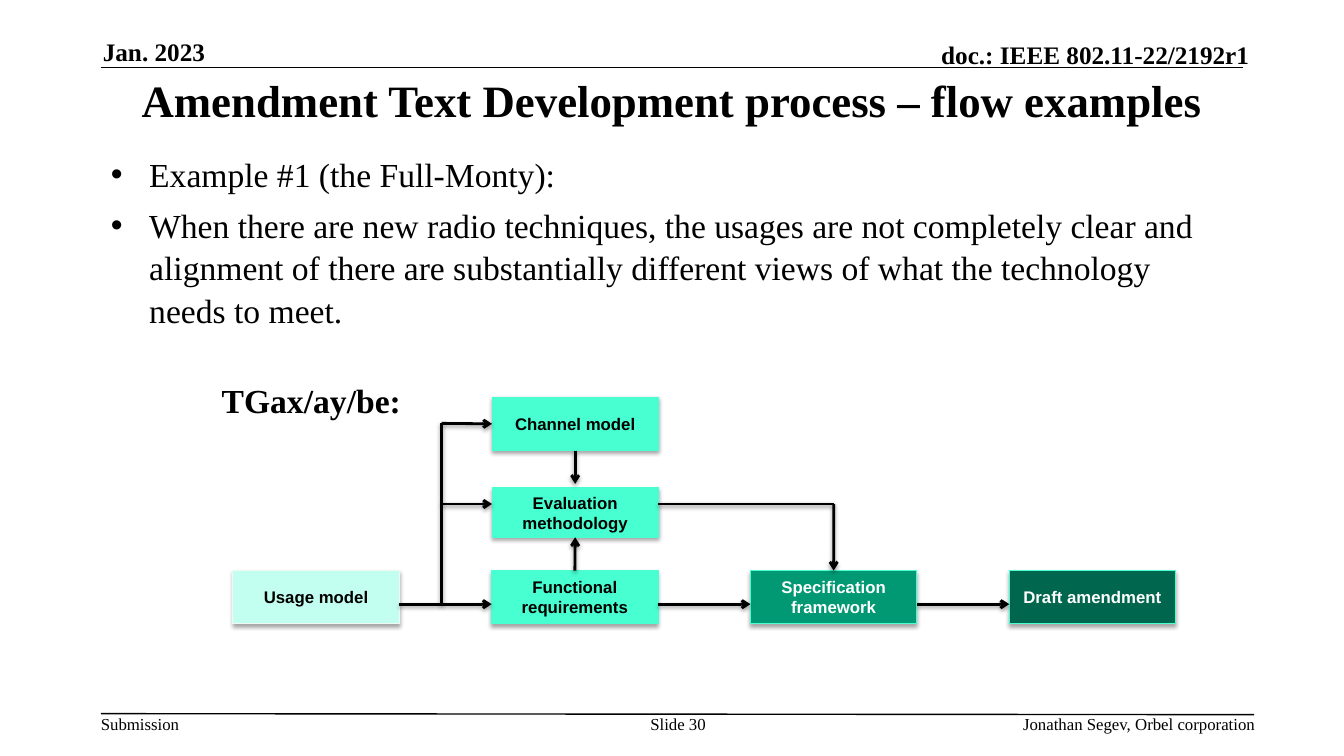
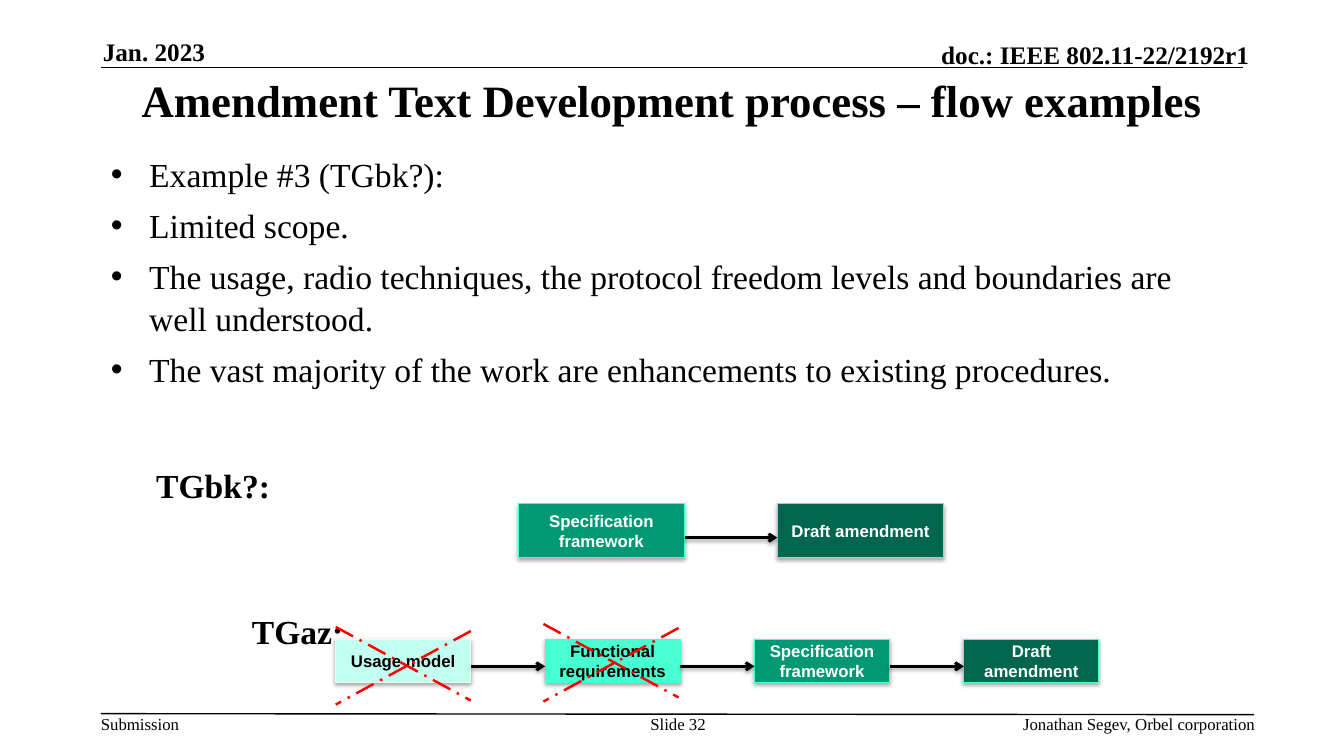
from lxml import etree
from pptx import Presentation
from pptx.dml.color import RGBColor
from pptx.enum.dml import MSO_LINE
from pptx.enum.shapes import MSO_CONNECTOR, MSO_SHAPE
from pptx.enum.text import MSO_ANCHOR, MSO_AUTO_SIZE, PP_ALIGN
from pptx.oxml.ns import qn
from pptx.util import Inches, Pt

LEFT, CENTER, RIGHT = PP_ALIGN.LEFT, PP_ALIGN.CENTER, PP_ALIGN.RIGHT
TOP, MIDDLE, BOTTOM = MSO_ANCHOR.TOP, MSO_ANCHOR.MIDDLE, MSO_ANCHOR.BOTTOM
FIXED = MSO_AUTO_SIZE.NONE
RECT, STRAIGHT = MSO_SHAPE.RECTANGLE, MSO_CONNECTOR.STRAIGHT
DASH_DOT = MSO_LINE.LONG_DASH_DOT

SERIF, SANS = "Times New Roman", "Arial"
COLORS = {
    "black": "000000", "white": "FFFFFF", "red": "FF0000",
    "pale": "C2FFF0", "mist": "EEF9F4", "mint": "47FFD1",
    "green": "009973", "deep": "00664D",
}
# Fill, outline and text colour of each step
STYLES = {
    "Usage model": ("pale", "mist", "black"),
    "Channel model": ("mint", "mint", "black"),
    "Evaluation methodology": ("mint", "mint", "black"),
    "Functional requirements": ("mint", "mint", "black"),
    "Specification framework": ("green", "mint", "white"),
    "Draft amendment": ("deep", "mint", "white"),
}
CHAIN = ["Usage model", "Functional requirements",
         "Specification framework", "Draft amendment"]
TITLE = "Amendment Text Development process – flow examples"


def color(name):
    return RGBColor.from_string(COLORS[name])


def place(shape, box):
    shape.left, shape.top, shape.width, shape.height = map(Inches, box)


def style(para, size, face=SERIF, bold=False, ink="black", align=LEFT):
    para.alignment = align
    font = para.font
    font.name, font.size, font.bold = face, Pt(size), bold
    font.color.rgb = color(ink)


def shade(shape, dist=None, alpha=0):
    """Give the shape a soft drop shadow, or none without a distance."""
    effects = etree.SubElement(shape._element.spPr, qn("a:effectLst"))
    if dist:
        drop = etree.SubElement(
            effects, qn("a:outerShdw"), blurRad=str(Pt(3.1)),
            dist=str(Pt(dist)), dir="5400000", rotWithShape="0")
        tint = etree.SubElement(drop, qn("a:srgbClr"), val=COLORS["black"])
        etree.SubElement(tint, qn("a:alpha"), val=str(alpha * 1000))


def write(slide, text, box, size, bold=True, align=LEFT, anchor=TOP, inset=0):
    label = slide.shapes.add_textbox(*map(Inches, box))
    frame = label.text_frame
    frame.word_wrap, frame.vertical_anchor = True, anchor
    frame.margin_left = frame.margin_right = Inches(inset)
    frame.margin_top = frame.margin_bottom = Inches(inset / 2)
    frame.text = text
    style(frame.paragraphs[0], size, bold=bold, align=align)


def rule(slide, start, end, width=1, ink="black", dash=None):
    line = slide.shapes.add_connector(
        STRAIGHT, *map(Inches, (*start, *end)))
    line.line.width = Pt(width)
    line.line.color.rgb = color(ink)
    if dash:
        line.line.dash_style = dash
    return line


def wire(slide, start, end, head=True):
    """Draw a shadowed flow line, with an arrowhead at its end."""
    line = rule(slide, start, end, 2)
    if head:
        etree.SubElement(line.line._get_or_add_ln(), qn("a:tailEnd"),
                         type="arrow")
    shade(line, 1.6, 38)
    return line


def plain(slide, *args):
    shade(rule(slide, *args))


def step(slide, name, box):
    fill, edge, ink = STYLES[name]
    shape = slide.shapes.add_shape(RECT, *map(Inches, box))
    shape.fill.solid()
    shape.fill.fore_color.rgb = color(fill)
    shape.line.color.rgb = color(edge)
    shape.line.width = Pt(0.75)
    shade(shape, 1.8, 35)
    frame = shape.text_frame
    frame.word_wrap, frame.vertical_anchor = True, MIDDLE
    frame.text = name
    style(frame.paragraphs[0], 12, SANS, True, ink, CENTER)
    return shape


def chain(slide, names, box, width):
    """Spread steps evenly over the box, joined by arrows."""
    left, top, span, height = box
    pitch = (span - width) / (len(names) - 1)
    level = top + 0.63 * height
    steps = {}
    for i, name in enumerate(names):
        x = left + i * pitch
        steps[name] = step(slide, name, (x, top, width, height))
        if i:
            wire(slide, (x - pitch + width, level), (x, level))
    return steps


def cross(slide, left, top):
    right = left + 1.34
    for start, end, y in ((left, right, top), (right, left, top + 0.04)):
        plain(slide, (start, y), (end, y + 0.73), 1.75, "red", DASH_DOT)


def page(deck, number, points):
    """Add a slide with header, footer, title and bullet list."""
    slide = deck.slides.add_slide(deck.slide_layouts[1])
    plain(slide, (1, 0.67), (12.33, 0.67))
    plain(slide, (1, 7.08), (12.44, 7.09))
    write(slide, "Jan. 2023", (1.02, 0.36, 2.73, 0.3), 18, anchor=BOTTOM)
    write(slide, "doc.: IEEE 802.11-22/2192r1", (7.29, 0.39, 5.1, 0.3), 18,
          align=RIGHT, anchor=BOTTOM)
    for text, box, align in (
            ("Submission", (1, 7.08, 0.79, 0.2), LEFT),
            (f"Slide {number}", (6.34, 7.08, 0.77, 0.4), CENTER),
            ("Jonathan Segev, Orbel corporation",
             (7.81, 7.08, 4.64, 0.2), RIGHT)):
        write(slide, text, box, 12, False, align)

    title = slide.shapes.title
    place(title, (1, 0.75, 11.33, 0.48))
    title.text_frame.auto_size = FIXED
    title.text_frame.vertical_anchor = MIDDLE
    title.text_frame.text = TITLE
    style(title.text_frame.paragraphs[0], 32, bold=True, align=CENTER)

    body = slide.placeholders[1]
    place(body, (1, 1.46, 11.33, 1.9))
    frame = body.text_frame
    frame.auto_size = FIXED
    frame.text = "\n".join(points)
    for i, para in enumerate(frame.paragraphs):
        props = para._p.get_or_add_pPr()
        props.set("marL", str(Inches(0.38)))
        props.set("indent", str(Inches(-0.38)))
        etree.SubElement(props, qn("a:buChar"), char="•")
        para.space_before = Pt(6 if i else 0)
        para.line_spacing = 1.05
        style(para, 24)
    return slide


def full(slide, left, top):
    """Draw the complete flow, its top row at the given point."""
    base, mid, bus = top + 1.72, top + 1.06, left + 2.07
    col, width, height = left + 2.57, 1.65, 0.53
    write(slide, "TGax/ay/be:", (left - 0.21, top - 0.22, 2.28, 0.56), 24,
          inset=0.1)
    steps = chain(slide, CHAIN, (left, base, 9.35, height), width)
    model = step(slide, "Channel model", (col, top, width, height))
    method = step(slide, "Evaluation methodology",
                  (col, top + 0.9, width, 0.49))
    wire(slide, (bus, top + 0.26), (bus, base + 0.34), False)
    wire(slide, (bus, mid), (col, mid))
    wire(slide, (bus, top + 0.26), (col, top + 0.26)).end_connect(model, 1)
    axis, turn = col + width / 2, left + 5.96
    down = wire(slide, (axis, top + height), (axis, top + 0.86))
    down.begin_connect(model, 2)
    rise = wire(slide, (axis, base), (axis, top + 1.39))
    rise.begin_connect(steps["Functional requirements"], 0)
    rise.end_connect(method, 2)
    wire(slide, (turn, mid), (col + width, mid), False)
    drop = wire(slide, (turn, mid), (turn, base))
    drop.end_connect(steps["Specification framework"], 0)


def short(slide, left, top):
    """Draw the two-step flow above the chain with its crossed steps."""
    write(slide, "TGbk?:", (left, top, 2.28, 0.5), 24, inset=0.1)
    chain(slide, CHAIN[2:], (left + 3.69, top + 0.44, 4.22, 0.53), 1.65)
    write(slide, "TGaz:", (left + 0.95, top + 1.45, 1.85, 0.41), 24,
          inset=0.1)
    chain(slide, CHAIN, (left + 1.88, top + 1.78, 7.57, 0.43), 1.34)
    cross(slide, left + 1.88, top + 1.66)
    cross(slide, left + 3.94, top + 1.63)


def main():
    deck = Presentation()
    deck.slide_width, deck.slide_height = Inches(13.33), Inches(7.5)
    full(page(deck, 30, [
        "Example #1 (the Full-Monty):",
        "When there are new radio techniques, the usages are not completely "
        "clear and alignment of there are substantially different views of "
        "what the technology needs to meet.",
    ]), 2.31, 3.94)
    short(page(deck, 32, [
        "Example #3 (TGbk?):",
        "Limited scope.",
        "The usage, radio techniques, the protocol freedom levels and "
        "boundaries are well understood.",
        "The vast majority of the work are enhancements to existing "
        "procedures.",
    ]), 1.45, 4.56)
    deck.save("out.pptx")


if __name__ == "__main__":
    main()
